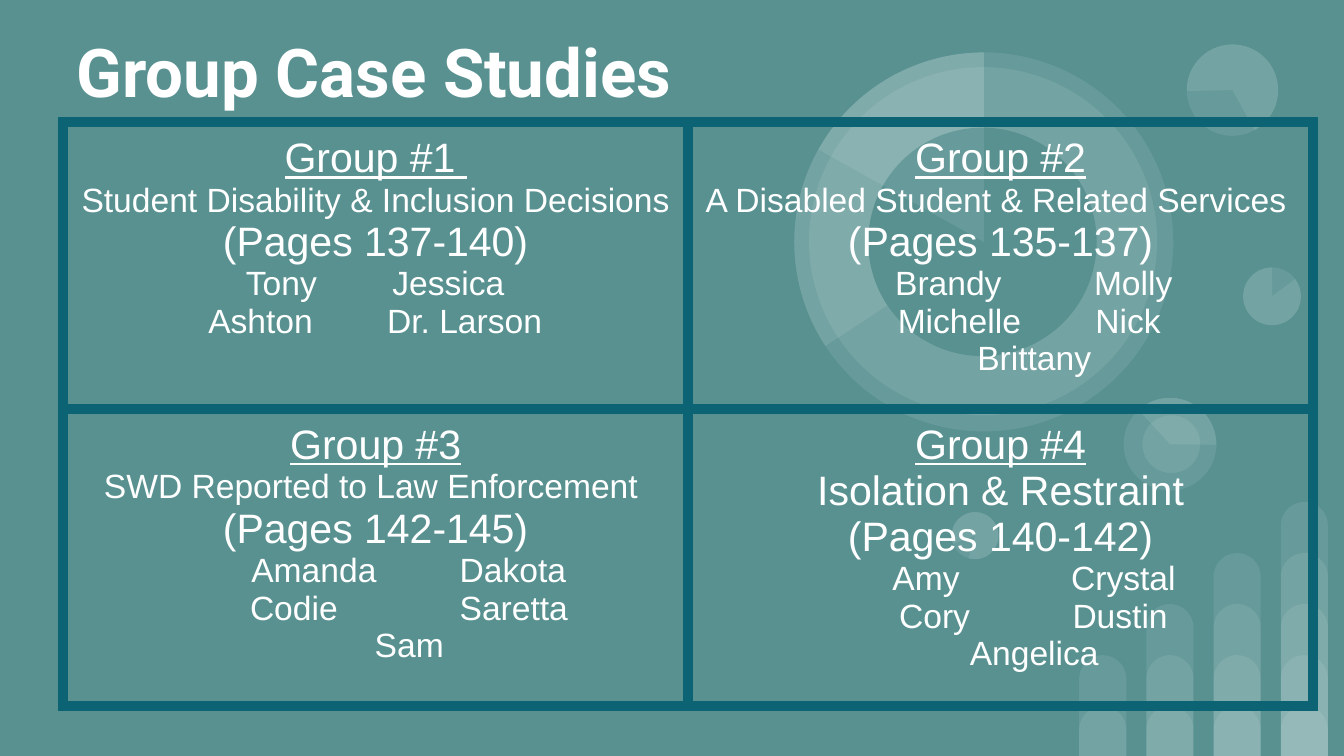
from dataclasses import dataclass

from lxml import etree
from pptx import Presentation
from pptx.dml.color import RGBColor
from pptx.enum.shapes import MSO_SHAPE
from pptx.enum.text import MSO_ANCHOR, PP_ALIGN
from pptx.oxml.ns import qn
from pptx.util import Inches, Pt

CIRCLE, PIE, BAR = MSO_SHAPE.OVAL, MSO_SHAPE.PIE, MSO_SHAPE.ROUND_2_SAME_RECTANGLE
CENTER, LEFT, MIDDLE = PP_ALIGN.CENTER, PP_ALIGN.LEFT, MSO_ANCHOR.MIDDLE

PAGE_WIDTH = 10
PAGE_HEIGHT = PAGE_WIDTH * 9 / 16
BACKGROUND, BORDER, WHITE = "599191", "0B6374", "FFFFFF"
VEIL = 9  # opacity of the decoration, in percent
INSET = 0.1
LARGE, SMALL = 22, 18

BAR_LEFT, BAR_PITCH, BAR_WIDTH = 8.03, 0.5, 0.35
BAR_BASE, BAR_STEP = 0.37, 0.38

TABLE_LEFT, TABLE_TOP = 0.47, 0.91
COLUMN_WIDTH, ROW_HEIGHTS = 4.65, (2.13, 2.21)


@dataclass
class Disc:
    """A circle, or a pie when it has angles."""
    left: float
    top: float
    size: float
    rotation: float = 0
    angles: tuple[float, ...] = ()
    color: str = WHITE
    opacity: int = VEIL


@dataclass
class Line:
    text: str
    size: int = SMALL
    underline: bool = False
    indent: float = 0


@dataclass
class Pair:
    """Two names on one line, each with its own left edge in the cell."""
    first: str
    second: str
    first_left: float
    second_left: float


DISCS = [
    Disc(9.25, 1.99, 0.43),
    Disc(7.08, 3.81, 0.35, 196.2),
    Disc(8.36, 2.96, 0.69, 90),
    Disc(8.36, 2.96, 0.69, 90, (82.45, 162.46)),
    Disc(8.5, 3.09, 0.43, 90),
    Disc(9.25, 1.99, 0.43, 0, (193.77, 162)),
    Disc(8.83, 0.33, 0.68, 215.9),
    Disc(8.83, 0.33, 0.68, 215.9, (193.77, 123.14)),
    Disc(5.91, 0.39, 2.82),
    Disc(6.02, 0.5, 2.59, 34.1),
    Disc(5.91, 0.39, 2.82, 0, (88.01, 162)),
    Disc(6.46, 0.95, 1.7, 34.1, color=BACKGROUND, opacity=100),
    Disc(5.91, 0.39, 2.82, 0, (125.54, 162)),
    Disc(7.08, 3.81, 0.35, 196.2, (193.77, 162)),
]

GROUPS = [
    [
        [Line("Group #1 ", LARGE, True),
         Line("Student Disability & Inclusion Decisions"),
         Line("(Pages 137-140)", LARGE),
         Pair("Tony", "Jessica", 1.26, 2.35),
         Pair("Ashton", "Dr. Larson", 0.98, 2.31)],
        [Line("Group #2", LARGE, True),
         Line("A Disabled Student & Related Services "),
         Line("(Pages 135-137)", LARGE),
         Pair("Brandy", "Molly", 1.44, 2.92),
         Pair("Michelle", "Nick", 1.46, 2.93),
         Line("Brittany", indent=0.5)],
    ],
    [
        [Line("Group #3", LARGE, True),
         Line("SWD Reported to Law Enforcement "),
         Line("(Pages 142-145)", LARGE),
         Pair("Amanda", "Dakota", 1.3, 2.85),
         Pair("Codie", "Saretta", 1.29, 2.85),
         Line("Sam", indent=0.5)],
        [Line("Group #4", LARGE, True),
         Line("Isolation & Restraint", LARGE),
         Line("(Pages 140-142)", LARGE),
         Pair("Amy", "Crystal", 1.42, 2.75),
         Pair("Cory", "Dustin", 1.47, 2.76),
         Line("Angelica", indent=0.5)],
    ],
]


def rgb(color: str) -> RGBColor:
    return RGBColor.from_string(color)


def style_font(font, name: str, size: int) -> None:
    font.name, font.size = name, Pt(size)
    font.color.rgb = rgb(WHITE)


def set_insets(box) -> None:
    box.margin_left = box.margin_right = Inches(INSET)
    box.margin_top = box.margin_bottom = Inches(INSET)


def add_plain_shape(page, kind, left: float, top: float, width: float, height: float,
                    color: str = WHITE, opacity: int = VEIL):
    shape = page.shapes.add_shape(kind, *map(Inches, (left, top, width, height)))
    shape.shadow.inherit = False
    shape.line.fill.background()
    shape.fill.solid()
    shape.fill.fore_color.rgb = rgb(color)
    if opacity < 100:
        paint = shape._element.spPr.find(".//" + qn("a:srgbClr"))
        etree.SubElement(paint, qn("a:alpha"), val=str(opacity * 1000))
    return shape


def add_bars(page) -> None:
    """Stack overlapping bars, one more in each column."""
    for column in range(4):
        for level in range(column + 2):
            height = BAR_BASE + level * BAR_STEP
            bar = add_plain_shape(page, BAR, BAR_LEFT + column * BAR_PITCH,
                                  PAGE_HEIGHT - height, BAR_WIDTH, height)
            bar.adjustments[0] = 0.5


def add_disc(page, disc: Disc) -> None:
    shape = add_plain_shape(page, PIE if disc.angles else CIRCLE, disc.left, disc.top,
                            disc.size, disc.size, disc.color, disc.opacity)
    shape.rotation = disc.rotation
    for index, angle in enumerate(disc.angles):
        shape.adjustments[index] = angle


def add_title(page, text: str) -> None:
    box = page.shapes.add_textbox(*map(Inches, (TABLE_LEFT, 0.08, 9.3, 0.89)))
    frame = box.text_frame
    frame.word_wrap = True
    frame.vertical_anchor = MIDDLE
    set_insets(frame)
    para = frame.paragraphs[0]
    para.text = text
    style_font(para.font, "Roboto", 36)
    para.font.bold = True


def write_line(para, line: Line | Pair) -> None:
    """Write a centred line, or a pair whose hanging indent stops the tab."""
    properties = para._p.get_or_add_pPr()
    if isinstance(line, Pair):
        para.text = f"{line.first}\t{line.second}"
        para.alignment = LEFT
        properties.set("marL", str(Inches(line.second_left)))
        properties.set("indent", str(Inches(line.first_left - line.second_left)))
        style_font(para.font, "Arial", SMALL)
    else:
        para.text = line.text
        para.alignment = CENTER
        properties.set("marL", str(Inches(line.indent)))
        style_font(para.font, "Arial", line.size)
        para.font.underline = line.underline


def style_cell(cell) -> None:
    set_insets(cell)
    properties = cell._tc.get_or_add_tcPr()
    for side in ("lnL", "lnR", "lnT", "lnB"):
        edge = etree.SubElement(properties, qn(f"a:{side}"), w=str(Pt(6)))
        fill = etree.SubElement(edge, qn("a:solidFill"))
        etree.SubElement(fill, qn("a:srgbClr"), val=BORDER)
    cell.fill.background()


def add_group_table(page) -> None:
    frame = page.shapes.add_table(2, 2, *map(Inches, (
        TABLE_LEFT, TABLE_TOP, 2 * COLUMN_WIDTH, sum(ROW_HEIGHTS))))
    table = frame.table
    table.first_row = table.horz_banding = False
    for row, height, groups in zip(table.rows, ROW_HEIGHTS, GROUPS):
        row.height = Inches(height)
        for cell, lines in zip(row.cells, groups):
            style_cell(cell)
            text = cell.text_frame
            for index, line in enumerate(lines):
                write_line(text.add_paragraph() if index else text.paragraphs[0], line)


def main() -> None:
    deck = Presentation()
    deck.slide_width, deck.slide_height = Inches(PAGE_WIDTH), Inches(PAGE_HEIGHT)
    page = deck.slides.add_slide(deck.slide_layouts[6])
    page.background.fill.solid()
    page.background.fill.fore_color.rgb = rgb(BACKGROUND)
    add_bars(page)
    for disc in DISCS:
        add_disc(page, disc)
    add_title(page, "Group Case Studies")
    add_group_table(page)
    deck.save("out.pptx")


if __name__ == "__main__":
    main()
